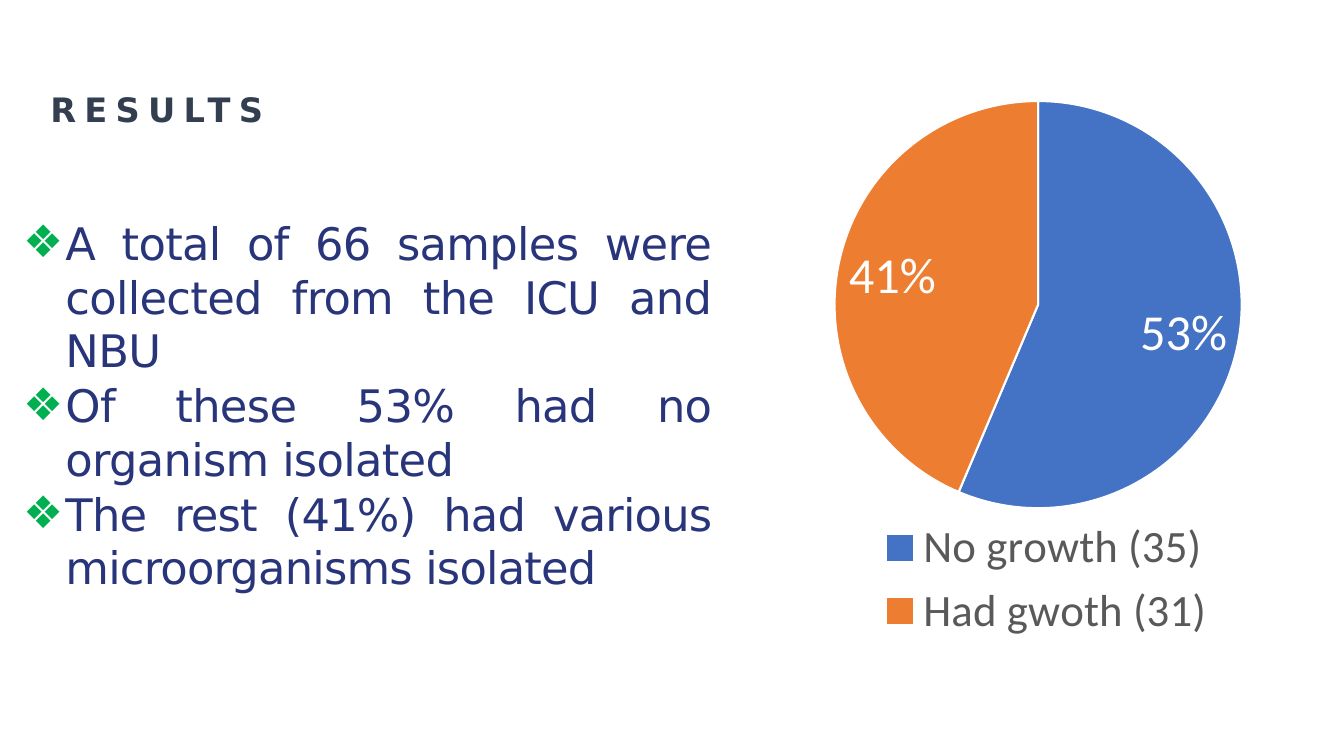
from lxml.etree import SubElement
from pptx import Presentation
from pptx.chart.data import CategoryChartData
from pptx.dml.color import RGBColor
from pptx.enum.chart import XL_CHART_TYPE as ChartType
from pptx.enum.chart import XL_LABEL_POSITION as LabelPosition
from pptx.enum.chart import XL_LEGEND_POSITION as LegendPosition
from pptx.enum.text import MSO_ANCHOR, MSO_AUTO_SIZE, PP_ALIGN
from pptx.oxml import parse_xml
from pptx.oxml.ns import nsdecls, qn
from pptx.util import Cm, Pt

TITLE = "RESULTS"
FINDINGS = [
    ("A total of 66 samples were collected from the ICU and NBU", -0.5),
    ("Of these 53% had no organism isolated", -0.5),
    ("The rest (41%) had various microorganisms isolated", -0.6),
]
GROWTH = [("No growth (35)", 0.53), ("Had gwoth (31)", 0.41)]

SLATE = RGBColor(0x33, 0x3F, 0x50)
NAVY = RGBColor(0x29, 0x35, 0x7A)
GREEN = RGBColor(0x00, 0xB0, 0x50)
BLUE = RGBColor(0x44, 0x72, 0xC4)
ORANGE = RGBColor(0xED, 0x7D, 0x31)
GREY = RGBColor(0x59, 0x59, 0x59)
WHITE = RGBColor(0xFF, 0xFF, 0xFF)
BLACK = RGBColor(0, 0, 0)
TEXT_FONT = "DejaVu Sans"
CHART_FONT = "Calibri"

TITLE_BOX = (Cm(1.27), Cm(1.88), Cm(12.5), Cm(1.3))
BODY_BOX = (Cm(0.56), Cm(5.33), Cm(17.37), Cm(9.75))
CHART_BOX = (Cm(19.25), Cm(2.46), Cm(12.73), Cm(14.12))
# Left, top, width and height as shares of the chart
PLOT_LAYOUT = (0.14, 0.005, 0.806, 0.729)
LEGEND_LAYOUT = (0.23, 0.74, 0.66, 0.24)


def set_font(font, name, size, color, bold=False):
    font.name, font.size, font.bold = name, Pt(size), bold
    font.color.rgb = color


def add_run(paragraph, text, size, color, tracking, bold=False):
    run = paragraph.add_run()
    run.text = text
    set_font(run.font, TEXT_FONT, size, color, bold)
    run.font._element.set("spc", str(round(tracking * 100)))


def prepare_frame(shape, box, anchor):
    shape.left, shape.top, shape.width, shape.height = box
    frame = shape.text_frame
    frame.margin_left = frame.margin_right = frame.margin_bottom = 0
    frame.margin_top = Cm(0.1)
    frame.vertical_anchor = anchor
    frame.word_wrap = True
    frame.auto_size = MSO_AUTO_SIZE.SHAPE_TO_FIT_TEXT
    return frame


def add_bullet(paragraph):
    properties = paragraph._p.get_or_add_pPr()
    properties.set("marL", str(Cm(1.09)))
    properties.set("indent", str(Cm(-1.07)))
    color = SubElement(properties, qn("a:buClr"))
    SubElement(color, qn("a:srgbClr")).set("val", str(GREEN))
    SubElement(properties, qn("a:buFont")).set("typeface", TEXT_FONT)
    SubElement(properties, qn("a:buChar")).set("char", "❖")


def manual_layout(shares, inner=False):
    target = '<c:layoutTarget val="inner"/>' if inner else ""
    modes = "".join(f'<c:{axis}Mode val="edge"/>' for axis in "xy")
    values = "".join(f'<c:{key} val="{share}"/>' for key, share in zip("xywh", shares))
    return parse_xml(f'<c:layout {nsdecls("c")}><c:manualLayout>{target}{modes}{values}'
                     "</c:manualLayout></c:layout>")


def add_growth_pie(slide):
    data = CategoryChartData(number_format="0%")
    data.categories = [name for name, share in GROWTH]
    data.add_series("Series 1", [share for name, share in GROWTH])
    chart = slide.shapes.add_chart(ChartType.PIE, *CHART_BOX, data).chart
    chart.has_title = False
    set_font(chart.font, CHART_FONT, 10, BLACK)

    plot = chart.plots[0]
    plot.vary_by_categories = True
    for index, color in enumerate((BLUE, ORANGE)):
        slice_format = plot.series[0].points[index].format
        slice_format.fill.solid()
        slice_format.fill.fore_color.rgb = color
        slice_format.line.color.rgb = WHITE
        slice_format.line.width = Pt(1.5)

    labels = plot.series[0].data_labels
    labels.show_value = True
    labels.number_format, labels.number_format_is_linked = "0%", False
    labels.position = LabelPosition.BEST_FIT
    set_font(labels.font, CHART_FONT, 36, WHITE)

    chart.has_legend = True
    legend = chart.legend
    legend.position = LegendPosition.BOTTOM
    legend.include_in_layout = False
    set_font(legend.font, CHART_FONT, 32, GREY)

    plot_area = chart._chartSpace.chart.plotArea
    for old_layout in plot_area.findall(qn("c:layout")):
        plot_area.remove(old_layout)
    plot_area.insert(0, manual_layout(PLOT_LAYOUT, inner=True))
    for old_layout in legend._element.findall(qn("c:layout")):
        legend._element.remove(old_layout)
    legend._element.find(qn("c:legendPos")).addnext(manual_layout(LEGEND_LAYOUT))


def main():
    presentation = Presentation()
    presentation.slide_width, presentation.slide_height = Cm(33.87), Cm(19.05)
    slide = presentation.slides.add_slide(presentation.slide_layouts[1])
    title, body = slide.placeholders

    heading = prepare_frame(title, TITLE_BOX, MSO_ANCHOR.MIDDLE).paragraphs[0]
    heading.alignment = PP_ALIGN.LEFT
    heading.line_spacing = Pt(37.7)
    heading.space_before = Pt(0)
    add_run(heading, TITLE, 24, SLATE, 5.9, bold=True)

    frame = prepare_frame(body, BODY_BOX, MSO_ANCHOR.TOP)
    for index, (text, tracking) in enumerate(FINDINGS):
        paragraph = frame.add_paragraph() if index else frame.paragraphs[0]
        add_bullet(paragraph)
        paragraph.alignment = PP_ALIGN.JUSTIFY
        paragraph.space_before = Pt(0.7 if index else 0)
        add_run(paragraph, text, 32, NAVY, tracking)

    add_growth_pie(slide)
    presentation.save("out.pptx")


if __name__ == "__main__":
    main()
